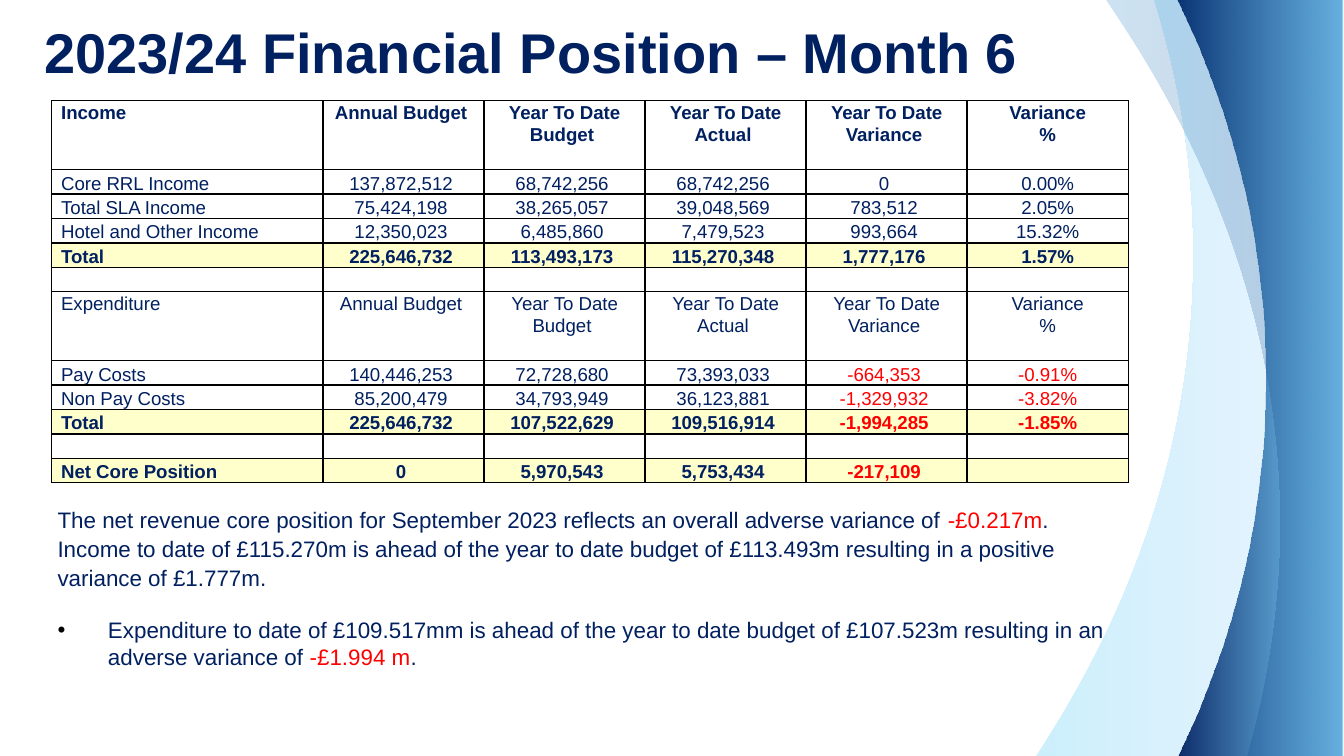
import pptx
import pptx.util
import pptx.dml.color
import pptx.enum.text
import pptx.oxml.ns
import lxml.etree

CELL = 0.1
COLS, ROWS = 100, 56.25
NAVY, RED, CREAM, BLACK = "002060", "FF0000", "FFFFCC", "000000"
FONT = "Arial"
ALIGN = pptx.enum.text.PP_ALIGN
ANCHOR = pptx.enum.text.MSO_ANCHOR
HEADS = ["Annual Budget", "Year To Date Budget", "Year To Date Actual",
         "Year To Date Variance", "Variance %"]
DATA = [
    ["Income"] + HEADS,
    ["Core RRL Income", "137,872,512", "68,742,256", "68,742,256", "0", "0.00%"],
    ["Total SLA Income", "75,424,198", "38,265,057", "39,048,569", "783,512", "2.05%"],
    ["Hotel and Other Income", "12,350,023", "6,485,860", "7,479,523", "993,664", "15.32%"],
    ["Total", "225,646,732", "113,493,173", "115,270,348", "1,777,176", "1.57%"],
    [""] * 6,
    ["Expenditure"] + HEADS,
    ["Pay Costs", "140,446,253", "72,728,680", "73,393,033", "-664,353", "-0.91%"],
    ["Non Pay Costs", "85,200,479", "34,793,949", "36,123,881", "-1,329,932", "-3.82%"],
    ["Total", "225,646,732", "107,522,629", "109,516,914", "-1,994,285", "-1.85%"],
    [""] * 6,
    ["Net Core Position", "0", "5,970,543", "5,753,434", "-217,109", ""],
]
WAVES = [
    ([(11.8, 19), (11.8, 12.5), (10.8, 6.1), (8.9, 0), (22.9, 0), (22.9, 56.4),
      (0, 56.4), (7.6, 45), (11.8, 32.4), (11.8, 19)],
     [("00B0F0", 20), ("99CCFF", 20)]),
    ([(17.2, 28.2), (17.2, 18.4), (14.9, 8.9), (10.6, 0), (22.9, 0), (22.9, 56.4),
      (10.6, 56.4), (14.9, 47.5), (17.2, 38.1), (17.2, 28.2)],
     [("002060", 94), ("66CCFF", 80)]),
    ([(18.3, 39), (18.3, 25.1), (13.6, 11.9), (5.3, 0), (22.9, 0), (22.9, 56.4),
      (15.8, 56.4), (17.4, 50.8), (18.3, 45), (18.3, 39)],
     [("0070C0", 20), ("002060", 20)]),
]


def size(n):
    return pptx.util.Inches(n * CELL)


def paint(code):
    return pptx.dml.color.RGBColor.from_string(code)


def tag(name):
    return pptx.oxml.ns.qn("a:" + name)


def child(node, name, **items):
    return lxml.etree.SubElement(node, tag(name), **items)


def write(para, text, points, color=NAVY, bold=False):
    run = para.add_run()
    run.text = text
    font = run.font
    font.name, font.size, font.bold = FONT, pptx.util.Pt(points), bold
    font.color.rgb = paint(color)


def draw_wave(slide, box, points, stops):
    spots = [(size(box[0] + x), size(box[1] + y)) for x, y in points]
    pen = slide.shapes.build_freeform(*spots[0], scale=1.0)
    pen.add_line_segments(spots[1:], close=True)
    shape = pen.convert_to_shape()
    lines = list(shape.element.iter(tag("lnTo")))
    for first in (0, 6):
        curve = lxml.etree.Element(tag("cubicBezTo"))
        lines[first].addprevious(curve)
        for line in lines[first:first + 3]:
            curve.append(line[0])
            line.getparent().remove(line)
    shape.shadow.inherit = False
    shape.line.fill.background()
    shape.fill.gradient()
    shape.fill.gradient_angle = 0
    for stop, (color, alpha) in zip(shape.fill.gradient_stops, stops):
        stop.color.rgb = paint(color)
    for node, (color, alpha) in zip(shape.element.iter(tag("gs")), stops):
        child(node[0], "alpha", val=str(alpha * 1000))


def draw_waves(slide, box):
    for points, stops in WAVES:
        draw_wave(slide, box, points, stops)


def add_box(slide, box):
    frame = slide.shapes.add_textbox(*map(size, box)).text_frame
    frame.word_wrap = True
    return frame


def draw_title(slide, box):
    frame = add_box(slide, box)
    frame.margin_left = frame.margin_right = 0
    frame.margin_top = frame.margin_bottom = 0
    frame.vertical_anchor = ANCHOR.BOTTOM
    write(frame.paragraphs[0], "2023/24 Financial Position – Month 6", 30, bold=True)


def edge(cell):
    props = cell._tc.get_or_add_tcPr()
    for side in ("lnL", "lnR", "lnT", "lnB"):
        line = child(props, side, w=str(pptx.util.Pt(0.75)))
        child(child(line, "solidFill"), "srgbClr", val=BLACK)


def fill_cell(cell, text, head, first, shade, bold):
    edge(cell)
    if shade:
        cell.fill.solid()
        cell.fill.fore_color.rgb = paint(CREAM)
    else:
        cell.fill.background()
    cell.margin_left = cell.margin_right = size(2.8 if text == HEADS[-1] else 0.7)
    cell.margin_top = cell.margin_bottom = 0
    cell.vertical_anchor = ANCHOR.TOP if head else ANCHOR.BOTTOM
    para = cell.text_frame.paragraphs[0]
    para.line_spacing = 1.07
    para.alignment = ALIGN.LEFT if first else ALIGN.CENTER
    if text:
        tail = "" if first or text.endswith("%") else " "
        write(para, text + tail, 10, RED if text.startswith("-") else NAVY, bold)
    else:
        child(para._p, "endParaRPr", sz="1000")


def draw_table(slide, box):
    left, top, width, height = box
    grid = slide.shapes.add_table(len(DATA), len(DATA[0]), *map(size, box)).table
    grid.first_row = grid.horz_banding = False
    for i, col in enumerate(grid.columns):
        col.width = size(width * (0.252 if i == 0 else 0.1496))
    for i, words in enumerate(DATA):
        head = words[1] == HEADS[0]
        shade = words[0] in ("Total", "Net Core Position")
        grid.rows[i].height = size(height * (0.18 if head else 0.064))
        for j, text in enumerate(words):
            fill_cell(grid.cell(i, j), text, head, j == 0, shade, shade or i == 0)


def draw_notes(slide, box):
    frame = add_box(slide, box)
    para = frame.paragraphs[0]
    para.line_spacing = 1.07
    para.space_after = pptx.util.Pt(8)
    write(para, "The net revenue core position for September 2023 reflects an overall "
          "adverse variance of ", 12)
    write(para, "-£0.217m", 12, RED)
    write(para, ". Income to date of £115.270m is ahead of the year to date budget of "
          "£113.493m resulting in a positive variance of £1.777m.", 12)
    para = frame.add_paragraph()
    para.space_before = pptx.util.Pt(5.6)
    props = para._p.get_or_add_pPr()
    props.set("marL", str(size(3.75)))
    props.set("indent", str(-size(3.75)))
    child(child(props, "buClr"), "srgbClr", val=BLACK)
    child(props, "buFont", typeface=FONT)
    child(props, "buChar", char="•")
    write(para, "Expenditure to date of £109.517mm is ahead of the year to date budget of "
          "£107.523m resulting in an adverse variance of ", 12)
    write(para, "-£1.994 m", 12, RED)
    write(para, ".", 12)


def main():
    deck = pptx.Presentation()
    deck.slide_width, deck.slide_height = size(COLS), size(ROWS)
    slide = deck.slides.add_slide(deck.slide_layouts[6])
    draw_waves(slide, (77, 0, 23, ROWS))
    draw_title(slide, (3.3, 1.5, 80.6, 4.8))
    draw_notes(slide, (3.3, 37.05, 81.5, 13.5))
    draw_table(slide, (3.85, 7.5, 80.1, 28.45))
    deck.save("out.pptx")


if __name__ == "__main__":
    main()
